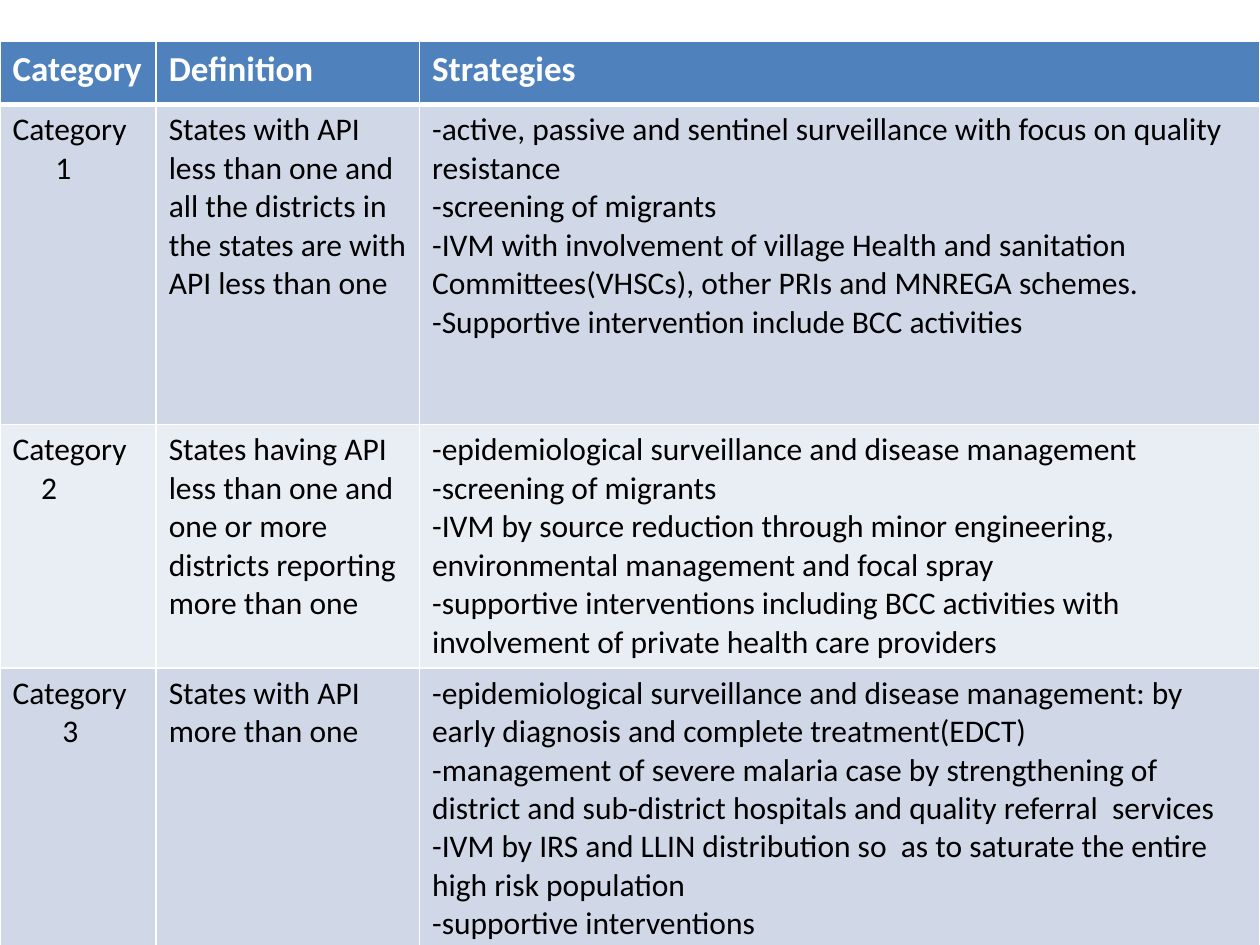
"""Build a slide with a table of malaria control categories."""
from lxml.etree import SubElement
from pptx import Presentation
from pptx.dml.color import RGBColor
from pptx.oxml.ns import qn
from pptx.util import Pt

WHITE = RGBColor(0xFF, 0xFF, 0xFF)
BLACK = RGBColor(0x00, 0x00, 0x00)
BLUE = RGBColor(0x4F, 0x81, 0xBD)
MID = RGBColor(0xD0, 0xD8, 0xE8)
PALE = RGBColor(0xE9, 0xED, 0xF4)

HEAD = {"name": "Calibri", "size": Pt(20), "bold": True}
BODY = {"name": "Calibri", "size": Pt(18), "bold": False}

WIDTHS = [89.28, 150.48, 480.24]
HEIGHTS = [36, 182.88, 87.12, 160.56]
INDENTS = [0, 24.4, 16.3, 28.5]
FILLS = [BLUE, MID, PALE, MID]
ROWS = [
    [["Category"], ["Definition"], ["Strategies"]],
    [
        ["Category", "1"],
        ["States with API less than one and all the districts in the states are with API less than one"],
        [
            "-active, passive and sentinel surveillance with focus on quality resistance",
            "-screening of migrants",
            "-IVM with involvement of village Health and sanitation Committees(VHSCs), other PRIs and MNREGA schemes.",
            "-Supportive intervention include BCC activities",
        ],
    ],
    [
        ["Category", "2"],
        ["States having API less than one and one or more districts reporting more than one"],
        [
            "-epidemiological surveillance and disease management",
            "-screening of migrants",
            "-IVM by source reduction through minor engineering, environmental management and focal spray",
            "-supportive interventions including BCC activities with involvement of private health care providers",
        ],
    ],
    [
        ["Category", "3"],
        ["States with API more than one"],
        [
            "-epidemiological surveillance and disease management: by early diagnosis and complete treatment(EDCT)",
            "-management of severe malaria case by strengthening of district and sub-district hospitals and quality referral  services",
            "-IVM by IRS and LLIN distribution so  as to saturate the entire high risk population",
            "-supportive interventions",
        ],
    ],
]


def add_edge(cell, side, width):
    props = cell._tc.get_or_add_tcPr()
    line = SubElement(props, qn(f"a:ln{side}"), w=str(Pt(width)))
    fill = SubElement(line, qn("a:solidFill"))
    SubElement(fill, qn("a:srgbClr"), val=str(WHITE))


deck = Presentation()
deck.slide_width, deck.slide_height = Pt(720), Pt(540)
slide = deck.slides.add_slide(deck.slide_layouts[6])
frame = slide.shapes.add_table(4, 3, Pt(0), Pt(23.76), Pt(720), Pt(516.24))
table = frame.table
for col, width in zip(table.columns, WIDTHS):
    col.width = Pt(width)
for row, height in zip(table.rows, HEIGHTS):
    row.height = Pt(height)
frame.height = Pt(516.24)

for r, row in enumerate(ROWS):
    style, ink = (BODY, BLACK) if r else (HEAD, WHITE)
    for c, lines in enumerate(row):
        cell = table.cell(r, c)
        for side in "LRTB":
            thick = (r, side) in [(0, "B"), (1, "T")]
            add_edge(cell, side, 3 if thick else 1)
        cell.fill.solid()
        cell.fill.fore_color.rgb = FILLS[r]
        cell.text = "\n".join(lines)
        for n, para in enumerate(cell.text_frame.paragraphs):
            if c == 0 and n == 1:
                para._p.get_or_add_pPr().set("marL", str(Pt(INDENTS[r])))
            font = para.runs[0].font
            for key, value in style.items():
                setattr(font, key, value)
            font.color.rgb = ink

deck.save("out.pptx")
